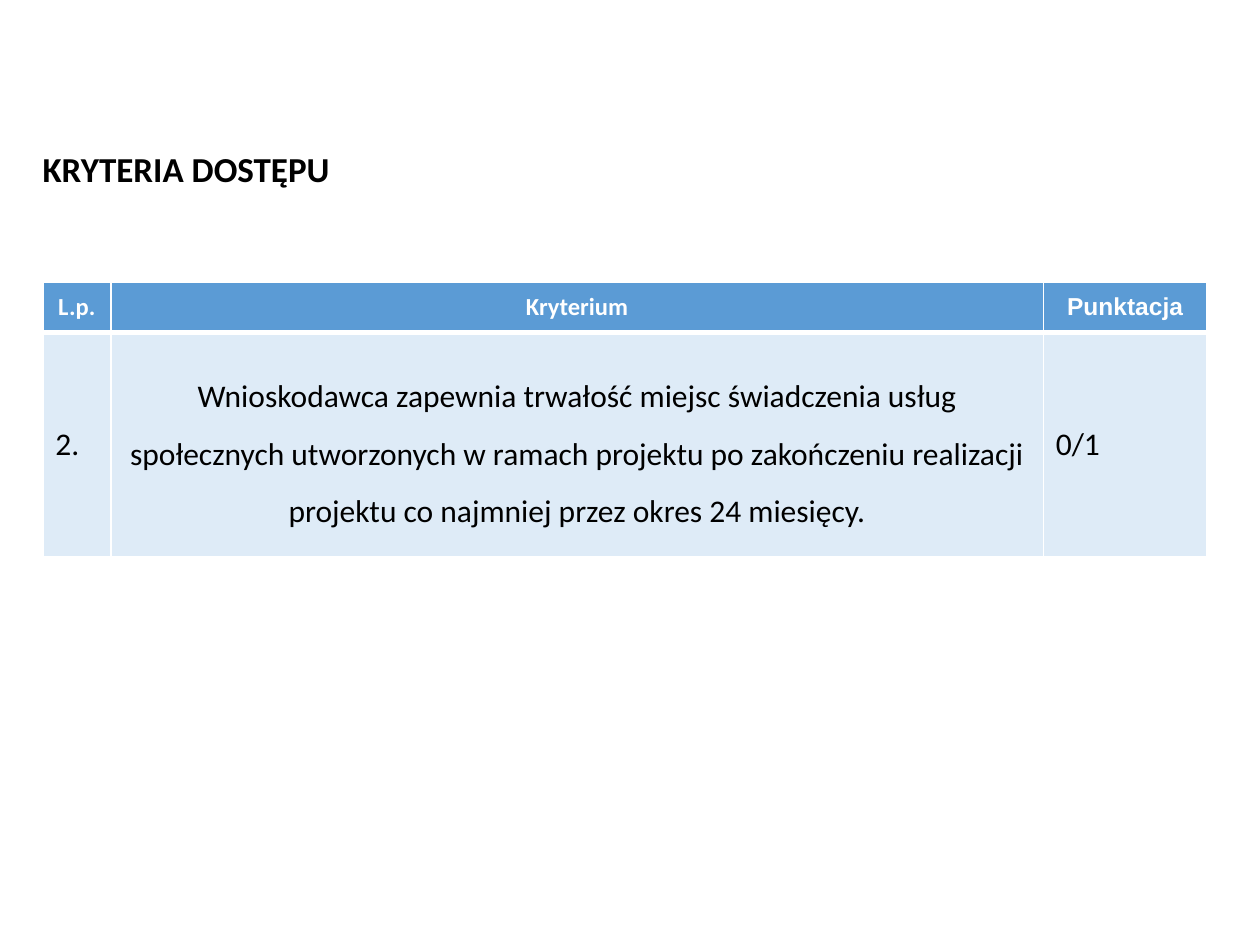
"""Build the access criteria slide with its scoring table."""
from lxml import etree
from pptx import Presentation
from pptx.dml.color import RGBColor
from pptx.enum.text import MSO_ANCHOR, MSO_AUTO_SIZE, PP_ALIGN
from pptx.oxml.ns import qn
from pptx.util import Inches, Pt

TITLE = "KRYTERIA DOSTĘPU"
ROWS = [
    ("L.p.", "Kryterium", "Punktacja"),
    ("2.", "Wnioskodawca zapewnia trwałość miejsc świadczenia usług społecznych "
           "utworzonych w ramach projektu po zakończeniu realizacji projektu "
           "co najmniej przez okres 24 miesięcy.", "0/1"),
]
COL_WIDTHS = (0.54, 7.4, 1.3)
ROW_HEIGHTS = (0.4, 1.78)
HEADER = dict(fill="5B9BD5", size=14, color="FFFFFF", bold=True)
BODY = dict(fill="DEEBF7", size=18, color="000000", bold=False)
HEADER_BORDERS = {"L": 1, "R": 1, "T": 1, "B": 3}
BODY_BORDERS = {"L": 1, "R": 1, "T": 3, "B": 1}


def rgb(value):
    return RGBColor.from_string(value)


def style_text(p, size, color, bold, name="Calibri"):
    font = p.runs[0].font
    font.name, font.size, font.bold = name, Pt(size), bold
    font.color.rgb = rgb(color)


def set_borders(cell, widths, color="FFFFFF"):
    tc_pr = cell._tc.get_or_add_tcPr()
    for i, (side, width) in enumerate(widths.items()):
        ln = etree.Element(qn(f"a:ln{side}"), w=str(Pt(width)))
        fill = etree.SubElement(ln, qn("a:solidFill"))
        etree.SubElement(fill, qn("a:srgbClr"), val=color)
        tc_pr.insert(i, ln)


def add_criteria(s):
    frame = s.shapes.add_table(len(ROWS), len(COL_WIDTHS), Inches(0.34), Inches(2.24),
                               Inches(sum(COL_WIDTHS)), Inches(sum(ROW_HEIGHTS)))
    table = frame.table
    for col, width in zip(table.columns, COL_WIDTHS):
        col.width = Inches(width)
    for row, height in zip(table.rows, ROW_HEIGHTS):
        row.height = Inches(height)
    for i, texts in enumerate(ROWS):
        look = HEADER if i == 0 else BODY
        for j, text in enumerate(texts):
            cell = table.cell(i, j)
            cell.text_frame.text = text
            cell.vertical_anchor = MSO_ANCHOR.MIDDLE
            cell.fill.solid()
            cell.fill.fore_color.rgb = rgb(look["fill"])
            set_borders(cell, HEADER_BORDERS if i == 0 else BODY_BORDERS)
            p = cell.text_frame.paragraphs[0]
            p.alignment = PP_ALIGN.CENTER if i == 0 or j == 1 else PP_ALIGN.LEFT
            if i and j == 1:
                p.line_spacing = 1.5
            name = "Arial" if (i, j) == (0, 2) else "Calibri"
            style_text(p, look["size"], look["color"], look["bold"], name)


def add_title(s):
    box = s.shapes.add_textbox(Inches(0.24), Inches(1.12), Inches(3.7), Inches(0.44))
    tf = box.text_frame
    tf.text = TITLE
    tf.word_wrap = True
    tf.auto_size = MSO_AUTO_SIZE.SHAPE_TO_FIT_TEXT
    tf.vertical_anchor = MSO_ANCHOR.MIDDLE
    style_text(tf.paragraphs[0], 20, "000000", True)


def main():
    prs = Presentation()
    prs.slide_width, prs.slide_height = Inches(10), Inches(7.5)
    s = prs.slides.add_slide(prs.slide_layouts[6])
    add_criteria(s)
    add_title(s)
    prs.save("out.pptx")


if __name__ == "__main__":
    main()
